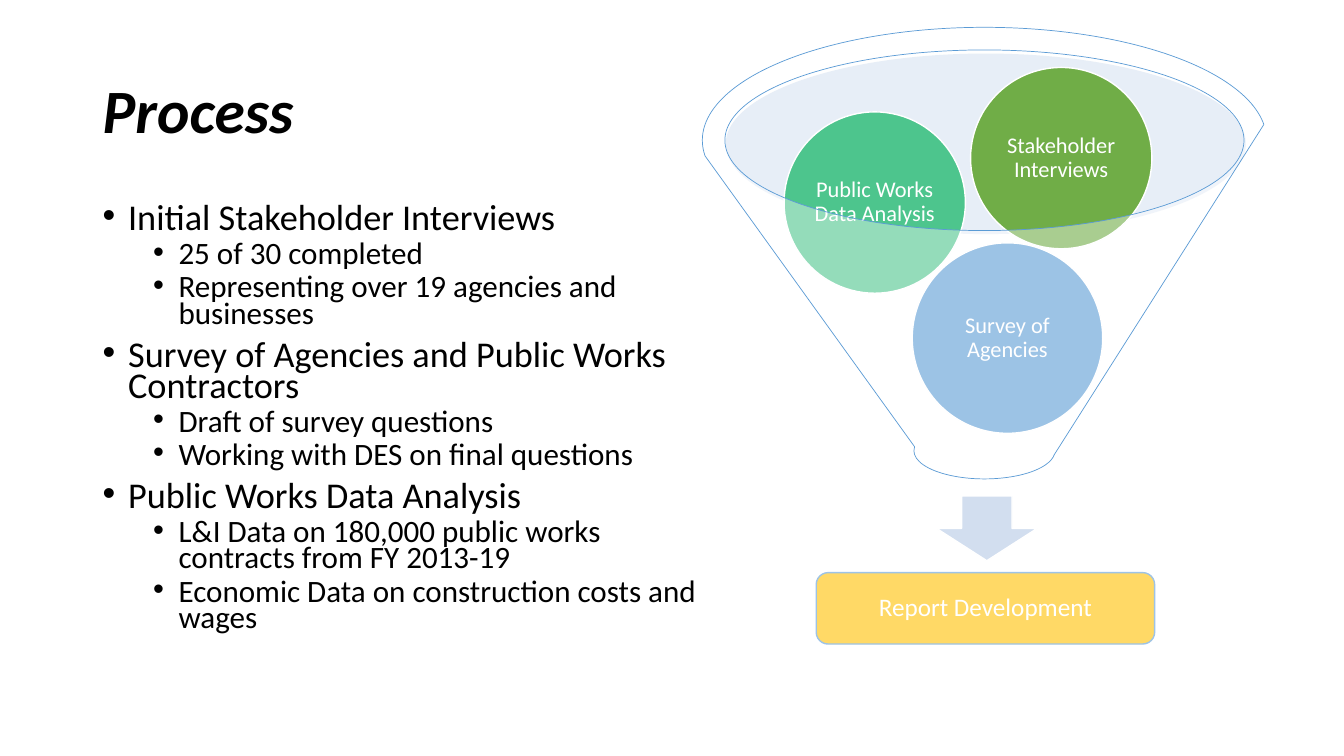
from typing import NamedTuple

from lxml import etree
from pptx import Presentation
from pptx.dml.color import RGBColor
from pptx.enum.shapes import MSO_SHAPE
from pptx.enum.text import MSO_ANCHOR, PP_ALIGN
from pptx.oxml.ns import qn
from pptx.util import Cm, Pt

ELLIPSE = MSO_SHAPE.OVAL
ROUNDED = MSO_SHAPE.ROUNDED_RECTANGLE
DOWN_ARROW = MSO_SHAPE.DOWN_ARROW
FUNNEL = MSO_SHAPE.FUNNEL
MIDDLE = MSO_ANCHOR.MIDDLE
CENTER = PP_ALIGN.CENTER

FONT = "Calibri"
BLACK = RGBColor(0x00, 0x00, 0x00)
WHITE = RGBColor(0xFF, 0xFF, 0xFF)
YELLOW = RGBColor(0xFF, 0xD9, 0x66)
SKY = RGBColor(0x9D, 0xC3, 0xE6)
BLUE = RGBColor(0x5B, 0x9B, 0xD5)
PALE_BLUE = RGBColor(0xC4, 0xD5, 0xEB)
ARROW_BLUE = RGBColor(0xD2, 0xDE, 0xEF)
MINT = RGBColor(0x4D, 0xC5, 0x8D)
GREEN = RGBColor(0x70, 0xAD, 0x47)


class Part(NamedTuple):
    """One diagram shape; lengths in cm, line width and text size in points."""
    kind: int
    left: float
    top: float
    width: float
    height: float
    fill: RGBColor
    line: RGBColor | None = WHITE
    line_width: float = 1
    opacity: int = 100
    text: str = ""
    size: float = 16


class Level(NamedTuple):
    """Bullet style; margin in cm, size and space before in points."""
    margin: float
    size: float
    space_before: float


TOPIC = Level(0.64, 25.9, 10)
DETAIL = Level(1.91, 22.2, 5)
HANGING = Cm(0.64)

DIAGRAM = [
    Part(ROUNDED, 20.57, 14.43, 8.53, 1.8, YELLOW, SKY, text="Report Development", size=18),
    Part(ELLIPSE, 18.29, 1.35, 13.11, 4.55, PALE_BLUE, None, opacity=40),
    Part(DOWN_ARROW, 23.6, 12.5, 2.54, 1.63, ARROW_BLUE),
    Part(ELLIPSE, 22.99, 6.12, 4.8, 4.8, BLUE, text="Survey of Agencies"),
    Part(ELLIPSE, 19.76, 2.82, 4.57, 4.57, MINT, text="Public Works Data Analysis"),
    Part(ELLIPSE, 24.46, 1.7, 4.57, 4.57, GREEN, text="Stakeholder Interviews"),
    Part(FUNNEL, 17.7, 0.69, 14.22, 11.38, WHITE, BLUE, line_width=0.5, opacity=40),
]

OUTLINE = {
    "Initial Stakeholder Interviews": [
        "25 of 30 completed",
        "Representing over 19 agencies and businesses",
    ],
    "Survey of Agencies and Public Works Contractors": [
        "Draft of survey questions",
        "Working with DES on final questions",
    ],
    "Public Works Data Analysis": [
        "L&I Data on 180,000 public works contracts from FY 2013-19",
        "Economic Data on construction costs and wages",
    ],
}


def format_paragraph(para, size: float, color: RGBColor, spacing: float) -> None:
    para.line_spacing = spacing
    para.font.size = Pt(size)
    for span in para.runs:
        span.font.name = FONT
        span.font.size = Pt(size)
        span.font.color.rgb = color


def set_opacity(shape, percent: int) -> None:
    color = shape.fill._xPr.find(qn("a:solidFill"))[0]
    etree.SubElement(color, qn("a:alpha"), val=str(percent * 1000))


def add_part(page, part: Part) -> None:
    shape = page.shapes.add_shape(
        part.kind, Cm(part.left), Cm(part.top), Cm(part.width), Cm(part.height))
    shape.shadow.inherit = False
    shape.fill.solid()
    shape.fill.fore_color.rgb = part.fill
    if part.opacity < 100:
        set_opacity(shape, part.opacity)
    if part.line is None:
        shape.line.fill.background()
    else:
        shape.line.color.rgb = part.line
        shape.line.width = Pt(part.line_width)
    if part.text:
        frame = shape.text_frame
        frame.text = part.text
        frame.word_wrap = True
        frame.vertical_anchor = MIDDLE
        frame.margin_left = frame.margin_right = Cm(0.05)
        frame.margin_top = frame.margin_bottom = Cm(0.05)
        frame.paragraphs[0].alignment = CENTER
        format_paragraph(frame.paragraphs[0], part.size, WHITE, 0.9)


def add_text_frame(page, left: float, top: float, width: float, height: float):
    box = page.shapes.add_textbox(Cm(left), Cm(top), Cm(width), Cm(height))
    box.text_frame.word_wrap = True
    return box.text_frame


def add_title(page, text: str) -> None:
    frame = add_text_frame(page, 2.34, 1.02, 29.21, 3.68)
    frame.vertical_anchor = MIDDLE
    frame.text = text
    para = frame.paragraphs[0]
    format_paragraph(para, 44, BLACK, 0.9)
    para.runs[0].font.bold = True
    para.runs[0].font.italic = True


def format_bullet(para, level: Level) -> None:
    format_paragraph(para, level.size, BLACK, 0.7)
    para.space_before = Pt(level.space_before)
    properties = para._p.get_or_add_pPr()
    properties.set("marL", str(Cm(level.margin)))
    properties.set("indent", str(-HANGING))
    bullet_font = etree.Element(qn("a:buFont"), typeface="Arial")
    bullet = etree.Element(qn("a:buChar"), char="•")
    defaults = properties.find(qn("a:defRPr"))
    defaults.addprevious(bullet_font)
    defaults.addprevious(bullet)


def add_outline(page, outline: dict[str, list[str]]) -> None:
    rows = []
    for topic, details in outline.items():
        rows.append((topic, TOPIC))
        rows.extend((detail, DETAIL) for detail in details)
    frame = add_text_frame(page, 2.34, 5.08, 15.6, 12.09)
    frame.text = "\n".join(text for text, _ in rows)
    for para, (_, level) in zip(frame.paragraphs, rows):
        para.level = 1 if level is DETAIL else 0
        format_bullet(para, level)


def main() -> None:
    deck = Presentation()
    deck.slide_width, deck.slide_height = Cm(33.87), Cm(19.05)
    page = deck.slides.add_slide(deck.slide_layouts[6])
    for part in DIAGRAM:
        add_part(page, part)
    add_title(page, "Process")
    add_outline(page, OUTLINE)
    deck.save("out.pptx")


if __name__ == "__main__":
    main()
